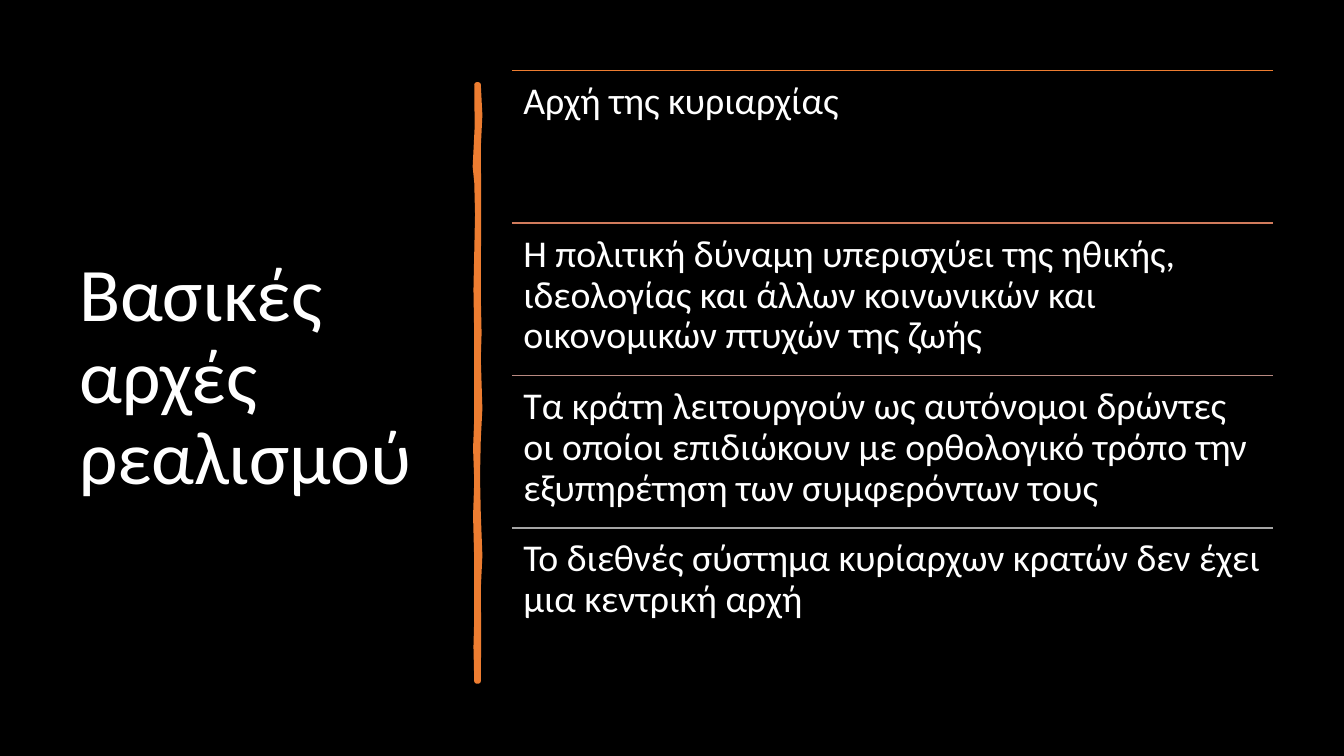
import pptx
import pptx.dml.color
import pptx.enum.shapes
import pptx.enum.text
import pptx.oxml.ns
import pptx.util
from lxml import etree

Cm = pptx.util.Cm
COLORS = {
    "background": "000000", "text": "FFFFFF", "divider": "ED7D31",
    "rule_1": "ED7D31", "rule_2": "D17B5C", "rule_3": "B98A82", "rule_4": "A5A5A5",
}
PRINCIPLES = [
    "Αρχή της κυριαρχίας",
    "Η πολιτική δύναμη υπερισχύει της ηθικής, ιδεολογίας και άλλων κοινωνικών "
    "και οικονομικών πτυχών της ζωής",
    "Τα κράτη λειτουργούν ως αυτόνομοι δρώντες οι οποίοι επιδιώκουν με ορθολογικό "
    "τρόπο την εξυπηρέτηση των συμφερόντων τους",
    "Το διεθνές σύστημα κυρίαρχων κρατών δεν έχει μια κεντρική αρχή",
]
LIST_LEFT, LIST_TOP, LIST_WIDTH, ROW_HEIGHT = 12.9, 1.78, 19.18, 3.84
DIVIDER_OUTLINE = [
    (12.06, 2.13), (12.1, 2.9), (12.06, 3.71), (12.07, 5), (12.06, 7.47),
    (12.08, 8.4), (12.06, 9.04), (12.1, 10.3), (12.06, 11.07), (12.04, 12),
    (12.06, 12.95), (12.1, 14), (12.06, 14.83), (12.07, 16), (12.06, 17.17),
    (12.01, 17.17), (11.99, 16.3), (12.01, 15.57), (12.01, 14.15), (11.98, 13),
    (12.01, 12.12), (11.98, 11.3), (12.01, 10.54), (12.01, 8.51), (11.99, 7.3),
    (12.01, 6.35), (12.03, 5.4), (12.01, 4.6), (11.97, 4.2), (12.02, 3.2),
    (12.01, 2.13),
]


def color(name):
    """Return the named colour."""
    return pptx.dml.color.RGBColor.from_string(COLORS[name])


def add_text(page, text, left, top, width, height, size, inset, anchor):
    """Add a wrapped text box with one paragraph."""
    box = page.shapes.add_textbox(Cm(left), Cm(top), Cm(width), Cm(height))
    frame = box.text_frame
    frame.word_wrap = True
    frame.vertical_anchor = anchor
    frame.margin_left = frame.margin_right = Cm(0.25)
    frame.margin_top = frame.margin_bottom = Cm(inset)
    if inset > 0.25:
        frame.margin_left = frame.margin_right = Cm(inset)
    para = frame.paragraphs[0]
    para.line_spacing = 0.9
    span = para.add_run()
    span.text = text
    span.font.name = "Calibri"
    span.font.size = pptx.util.Pt(size)
    span.font.color.rgb = color("text")


def add_rule(page, top, color_name):
    """Add a horizontal rule across the list."""
    rule = page.shapes.add_connector(
        pptx.enum.shapes.MSO_CONNECTOR.STRAIGHT,
        Cm(LIST_LEFT), Cm(top), Cm(LIST_LEFT + LIST_WIDTH), Cm(top))
    rule.line.color.rgb = color(color_name)
    rule.line.width = pptx.util.Pt(1)
    properties = rule._element.find(pptx.oxml.ns.qn("p:spPr"))
    etree.SubElement(properties, pptx.oxml.ns.qn("a:effectLst"))


def add_divider(page):
    """Add the hand-drawn vertical divider."""
    points = [(Cm(x), Cm(y)) for x, y in DIVIDER_OUTLINE]
    builder = page.shapes.build_freeform(*points[0])
    builder.add_line_segments(points[1:], close=True)
    divider = builder.convert_to_shape()
    divider.shadow.inherit = False
    divider.fill.solid()
    divider.fill.fore_color.rgb = color("divider")
    divider.line.color.rgb = color("divider")
    divider.line.width = pptx.util.Pt(3.25)


def main():
    """Build the slide and save it."""
    deck = pptx.Presentation()
    deck.slide_width, deck.slide_height = Cm(33.87), Cm(19.05)
    page = deck.slides.add_slide(deck.slide_layouts[6])
    page.background.fill.solid()
    page.background.fill.fore_color.rgb = color("background")
    anchors = pptx.enum.text.MSO_ANCHOR
    add_text(page, "Βασικές αρχές ρεαλισμού", 1.75, 1.78, 9.5, 15.52, 54, 0.13,
             anchors.MIDDLE)
    add_divider(page)
    for index, principle in enumerate(PRINCIPLES):
        top = LIST_TOP + index * ROW_HEIGHT
        add_rule(page, top, f"rule_{index + 1}")
        add_text(page, principle, LIST_LEFT, top, LIST_WIDTH, ROW_HEIGHT, 27, 0.29,
                 anchors.TOP)
    deck.save("out.pptx")


if __name__ == "__main__":
    main()
